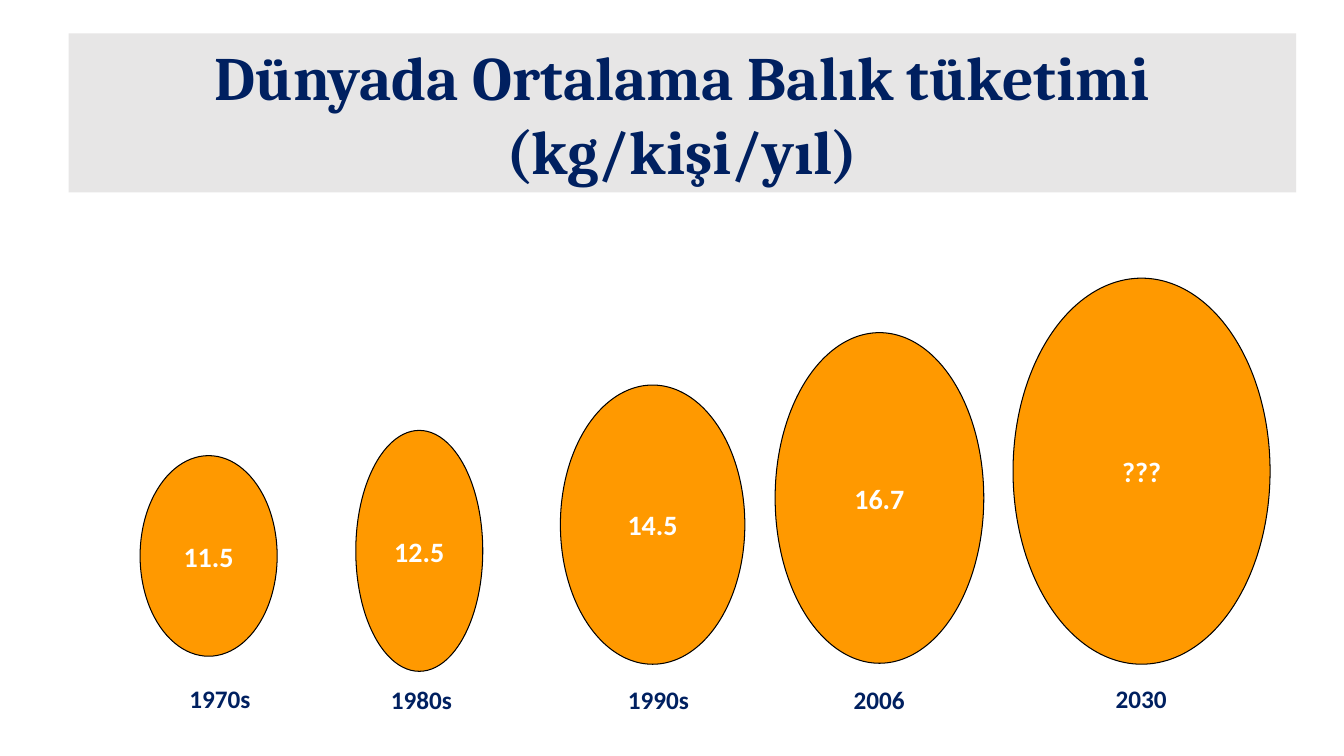
"""Build a slide on average world fish consumption per person."""
from dataclasses import dataclass

from pptx import Presentation
from pptx.dml.color import RGBColor
from pptx.enum.shapes import MSO_SHAPE
from pptx.enum.text import MSO_ANCHOR, MSO_AUTO_SIZE, PP_ALIGN
from pptx.shapes.autoshape import Shape
from pptx.slide import Slide
from pptx.util import Pt


@dataclass(frozen=True)
class Theme:
    """Colours, fonts and sizes of the slide."""
    navy: str = "002060"
    grey: str = "E7E6E6"
    orange: str = "FF9900"
    black: str = "000000"
    white: str = "FFFFFF"
    title_font: str = "Cambria"
    body_font: str = "Calibri"
    title_size: float = 44
    value_size: float = 20
    label_size: float = 18
    outline: float = 0.75


@dataclass(frozen=True)
class Frame:
    """A rectangle in points."""
    left: float
    top: float
    width: float
    height: float

    def lengths(self) -> tuple[Pt, Pt, Pt, Pt]:
        """Return the four lengths for a new shape."""
        return Pt(self.left), Pt(self.top), Pt(self.width), Pt(self.height)


@dataclass(frozen=True)
class Period:
    """A period with its consumption ellipse and its label."""
    name: str
    value: str
    ellipse: Frame
    label: Frame


THEME = Theme()
TITLE = ("Dünyada Ortalama Balık tüketimi", "(kg/kişi/yıl)")
TITLE_FRAME = Frame(48.96, 23.76, 876.96, 113.76)
PERIODS = (
    Period("1970s", "11.5", Frame(100.08, 325.44, 97.92, 143.28), Frame(128.16, 484.56, 58.32, 28.8)),
    Period("1980s", "12.5", Frame(254.16, 307.44, 90.72, 172.08), Frame(272.16, 485.28, 58.32, 28.8)),
    Period("1990s", "14.5", Frame(400.32, 275.04, 131.76, 199.44), Frame(441.36, 485.28, 58.32, 28.8)),
    Period("2006", "16.7", Frame(553.68, 237.6, 149.04, 236.16), Frame(602.64, 485.28, 51.12, 28.8)),
    Period("2030", "???", Frame(723.6, 198.72, 183.6, 275.76), Frame(789.84, 484.56, 51.12, 28.8)),
)


def write(box: Shape, *lines: str, font: str, size: float, color: str,
          align: PP_ALIGN = PP_ALIGN.CENTER, anchor: MSO_ANCHOR = MSO_ANCHOR.MIDDLE,
          wrap: bool = False, grow: bool = False) -> None:
    """Write bold lines into a box, one paragraph each."""
    frame = box.text_frame
    frame.word_wrap = wrap
    frame.vertical_anchor = anchor
    frame.auto_size = MSO_AUTO_SIZE.SHAPE_TO_FIT_TEXT if grow else MSO_AUTO_SIZE.NONE
    for index, line in enumerate(lines):
        para = frame.add_paragraph() if index else frame.paragraphs[0]
        para.alignment = align
        span = para.add_run()
        span.text = line
        span.font.name = font
        span.font.size = Pt(size)
        span.font.bold = True
        span.font.color.rgb = RGBColor.from_string(color)


def add_filled(page: Slide, kind: MSO_SHAPE, frame: Frame, fill: str,
               line: str | None = None) -> Shape:
    """Add a flat filled shape with an optional outline."""
    box = page.shapes.add_shape(kind, *frame.lengths())
    box.shadow.inherit = False
    box.fill.solid()
    box.fill.fore_color.rgb = RGBColor.from_string(fill)
    if line:
        box.line.color.rgb = RGBColor.from_string(line)
        box.line.width = Pt(THEME.outline)
    else:
        box.line.fill.background()
    return box


def add_title(page: Slide) -> None:
    """Add the title band."""
    band = add_filled(page, MSO_SHAPE.RECTANGLE, TITLE_FRAME, THEME.grey)
    write(band, *TITLE, font=THEME.title_font, size=THEME.title_size,
          color=THEME.navy, wrap=True, grow=True)


def add_period(page: Slide, period: Period) -> None:
    """Add the ellipse and the label of a period."""
    ellipse = add_filled(page, MSO_SHAPE.OVAL, period.ellipse, THEME.orange, THEME.black)
    write(ellipse, period.value, font=THEME.body_font, size=THEME.value_size, color=THEME.white)
    label = page.shapes.add_textbox(*period.label.lengths())
    write(label, period.name, font=THEME.body_font, size=THEME.label_size, color=THEME.navy,
          align=PP_ALIGN.LEFT, anchor=MSO_ANCHOR.TOP, grow=True)


def main() -> None:
    """Build and save the deck."""
    deck = Presentation()
    deck.slide_width, deck.slide_height = Pt(960), Pt(540)
    page = deck.slides.add_slide(deck.slide_layouts[6])
    add_title(page)
    for period in PERIODS:
        add_period(page, period)
    deck.save("out.pptx")


if __name__ == "__main__":
    main()
